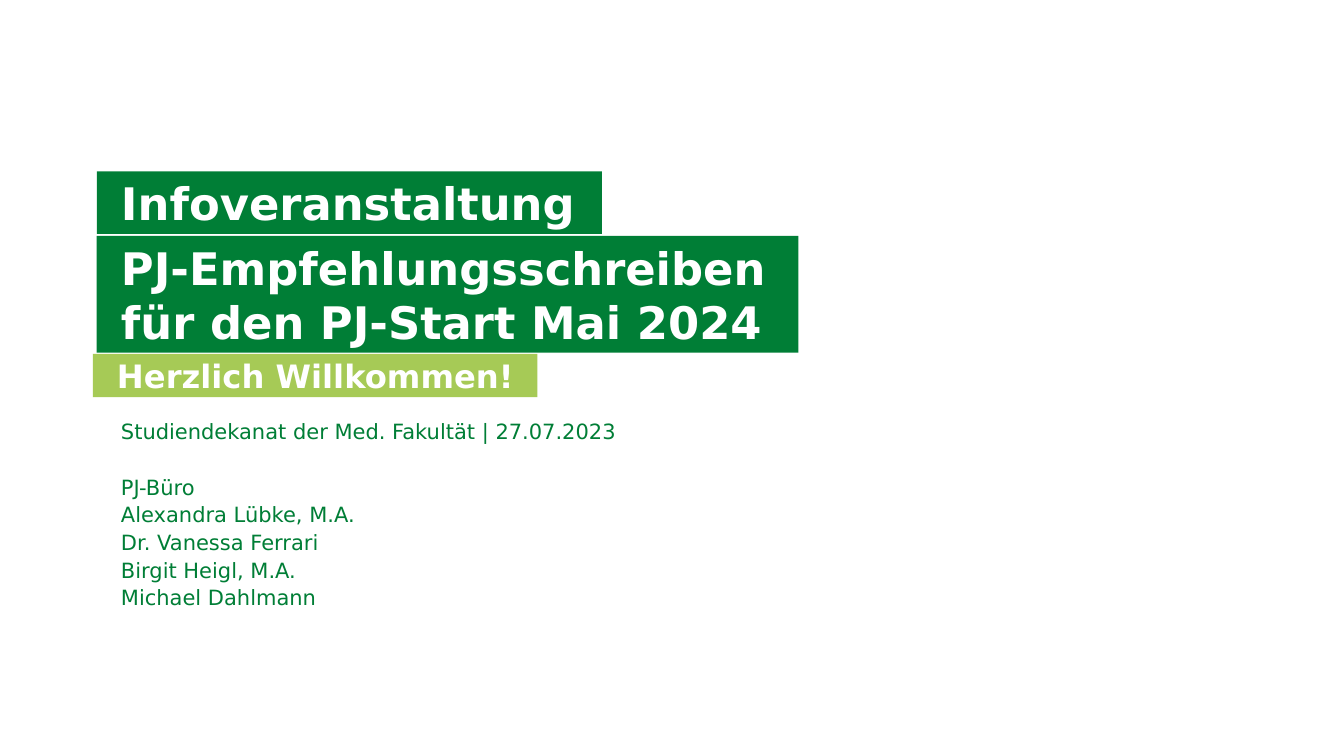
from dataclasses import dataclass

from pptx import Presentation
from pptx.dml.color import RGBColor
from pptx.enum.shapes import MSO_SHAPE
from pptx.enum.text import MSO_ANCHOR, PP_ALIGN
from pptx.util import Inches, Pt

RECTANGLE = MSO_SHAPE.RECTANGLE
LEFT = PP_ALIGN.LEFT
MIDDLE, TOP = MSO_ANCHOR.MIDDLE, MSO_ANCHOR.TOP

DARK_GREEN = RGBColor(0x00, 0x7E, 0x36)
LIGHT_GREEN = RGBColor(0xA6, 0xCA, 0x56)
WHITE = RGBColor(0xFF, 0xFF, 0xFF)
FONT = "DejaVu Sans"
DETAIL_SIZE = 15
DETAIL_SPACING = 1.1


@dataclass
class Banner:
    left: float
    top: float
    width: float
    height: float
    fill: RGBColor
    size: int
    lines: list[str]


BANNERS = [
    Banner(0.96, 1.7, 5.01, 0.62, DARK_GREEN, 32, ["Infoveranstaltung"]),
    Banner(0.96, 2.34, 6.96, 1.16, DARK_GREEN, 32,
           ["PJ-Empfehlungsschreiben", "für den PJ-Start Mai 2024"]),
    Banner(0.92, 3.51, 4.41, 0.43, LIGHT_GREEN, 23, ["Herzlich Willkommen!"]),
]

EVENT = "Studiendekanat der Med. Fakultät | 27.07.2023"
TEAM = ["PJ-Büro", "Alexandra Lübke, M.A.", "Dr. Vanessa Ferrari",
        "Birgit Heigl, M.A.", "Michael Dahlmann"]


def set_frame(frame, anchor, right: float, top: float, bottom: float) -> None:
    frame.word_wrap = True
    frame.vertical_anchor = anchor
    frame.margin_left = Inches(0.24)
    frame.margin_right = Inches(right)
    frame.margin_top = Inches(top)
    frame.margin_bottom = Inches(bottom)


def add_lines(frame, lines: list[str], size: int, color: RGBColor, bold: bool) -> None:
    for index, line in enumerate(lines):
        paragraph = frame.paragraphs[0] if index == 0 else frame.add_paragraph()
        paragraph.alignment = LEFT
        run = paragraph.add_run()
        run.text = line
        run.font.name = FONT
        run.font.size = Pt(size)
        run.font.bold = bold
        run.font.color.rgb = color


def add_banner(slide, banner: Banner) -> None:
    shape = slide.shapes.add_shape(
        RECTANGLE, Inches(banner.left), Inches(banner.top),
        Inches(banner.width), Inches(banner.height))
    shape.shadow.inherit = False
    shape.fill.solid()
    shape.fill.fore_color.rgb = banner.fill
    shape.line.fill.background()
    set_frame(shape.text_frame, MIDDLE, 0.1, 0.02, 0.02)
    add_lines(shape.text_frame, banner.lines, banner.size, WHITE, True)


def add_details(slide) -> None:
    box = slide.shapes.add_textbox(
        Inches(0.96), Inches(3.97), Inches(11.42), Inches(2))
    frame = box.text_frame
    set_frame(frame, TOP, 0, 0.16, 0)
    add_lines(frame, [EVENT, *TEAM], DETAIL_SIZE, DARK_GREEN, False)
    for paragraph in frame.paragraphs:
        paragraph.line_spacing = DETAIL_SPACING
    # One line of space sets the team apart from the event
    frame.paragraphs[1].space_before = Pt(19.8)


def main() -> None:
    presentation = Presentation()
    presentation.slide_width = Inches(13.33)
    presentation.slide_height = Inches(7.5)
    slide = presentation.slides.add_slide(presentation.slide_layouts[6])

    # Title banners
    for banner in BANNERS:
        add_banner(slide, banner)

    # Event and team
    add_details(slide)

    presentation.save("out.pptx")


if __name__ == "__main__":
    main()
